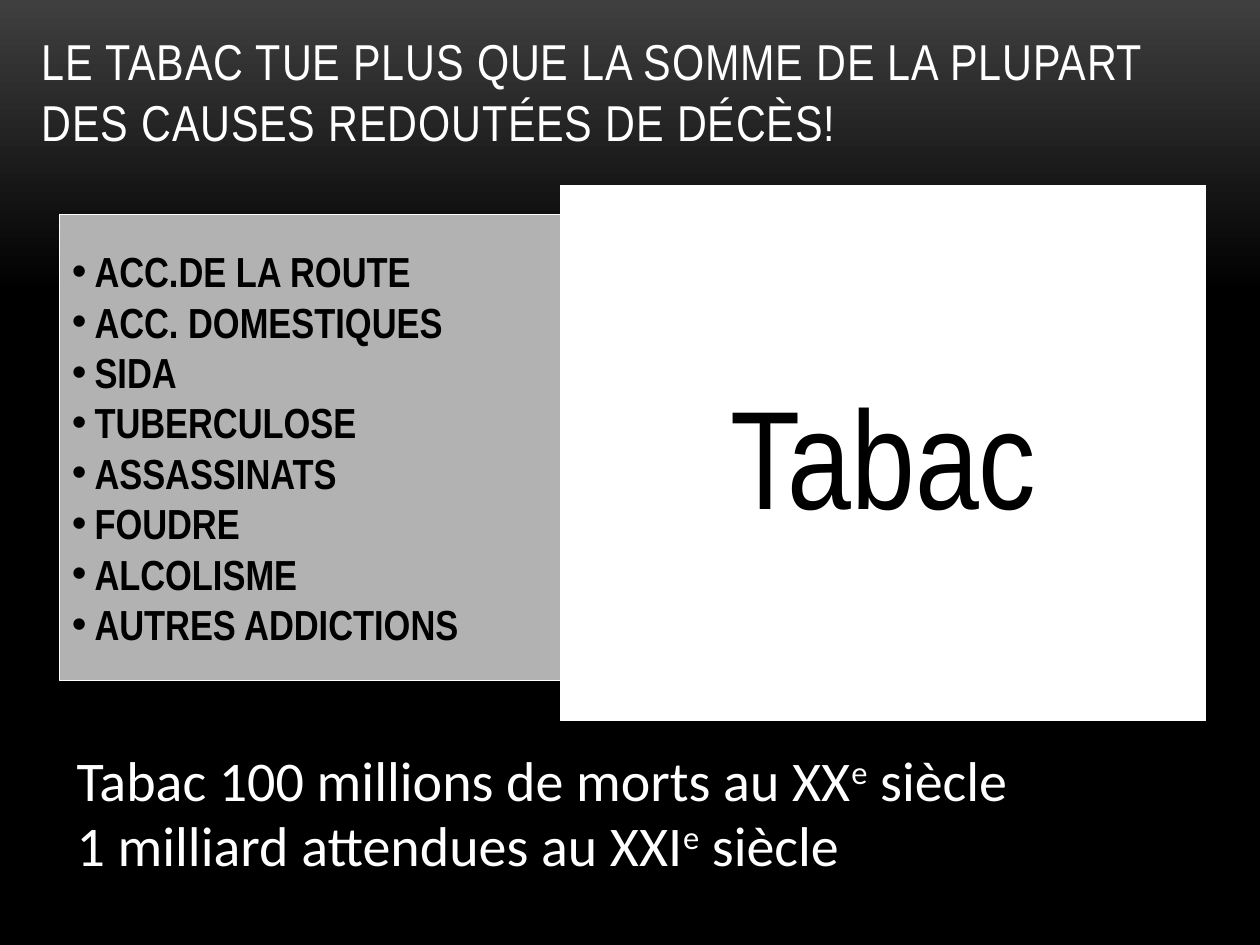
import pptx
import pptx.dml.color
import pptx.enum.shapes
import pptx.enum.text
import pptx.util
from lxml import etree
from pptx.oxml.ns import qn
from pptx.util import Inches

COLOURS = {"black": "000000", "charcoal": "3F3F3F", "grey": "B2B2B2", "white": "FFFFFF"}
NARROW = "Arial Narrow"
CAUSES = [
    "ACC.DE LA ROUTE",
    "ACC. DOMESTIQUES",
    "SIDA",
    "TUBERCULOSE",
    "ASSASSINATS",
    "FOUDRE",
    "ALCOLISME",
    "AUTRES ADDICTIONS",
]
TOLLS = [
    ("Tabac 100 millions de morts au XX", "e", " siècle"),
    ("1 milliard attendues au XXI", "e", " siècle"),
]


def rgb(name):
    return pptx.dml.color.RGBColor.from_string(COLOURS[name])


def place(shape, left, top, width, height):
    shape.left, shape.top = Inches(left), Inches(top)
    shape.width, shape.height = Inches(width), Inches(height)


def style(font, face, size, colour, bold=False):
    font.name = face
    font.size = pptx.util.Pt(size)
    font.bold = bold
    font.color.rgb = rgb(colour)


def set_frame(frame, anchor, wrap):
    frame.auto_size = pptx.enum.text.MSO_AUTO_SIZE.NONE
    frame.vertical_anchor = anchor
    frame.word_wrap = wrap


def paint_panel(panel, colour):
    panel.fill.solid()
    panel.fill.fore_color.rgb = rgb(colour)
    panel.line.color.rgb = rgb("white")
    panel.line.width = pptx.util.Pt(0.75)


def paint_background(slide):
    fill = slide.background.fill
    fill.gradient()
    fill.gradient_angle = 270
    for stop, (colour, position) in zip(fill.gradient_stops, [("charcoal", 0), ("black", 0.31)]):
        stop.color.rgb = rgb(colour)
        stop.position = position


def write_title(title):
    place(title, 0.23, 0.15, 9.61, 1.1)
    set_frame(title.text_frame, pptx.enum.text.MSO_ANCHOR.BOTTOM, True)
    title.text_frame.text = (
        "LE TABAC TUE PLUS QUE LA SOMME DE LA PLUPART DES CAUSES REDOUTÉES DE DÉCÈS!"
    )
    headline = title.text_frame.paragraphs[0]
    headline.alignment = pptx.enum.text.PP_ALIGN.LEFT
    for run in headline.runs:
        style(run.font, NARROW, 28.8, "white")
        run.font._element.set("spc", "50")


def write_causes(causes):
    place(causes, 0.47, 1.7, 4.06, 3.7)
    paint_panel(causes, "grey")
    frame = causes.text_frame
    set_frame(frame, pptx.enum.text.MSO_ANCHOR.MIDDLE, False)
    frame.text = "\n".join(CAUSES)
    for cause in frame.paragraphs:
        cause.space_before = pptx.util.Pt(0)
        properties = cause._p.get_or_add_pPr()
        properties.set("marL", str(Inches(0.18)))
        properties.set("indent", str(-Inches(0.18)))
        etree.SubElement(properties, qn("a:buFont")).set("typeface", "Arial")
        etree.SubElement(properties, qn("a:buChar")).set("char", "•")
        for run in cause.runs:
            style(run.font, NARROW, 24, "black", True)


def add_tobacco(slide):
    tobacco = slide.shapes.add_shape(
        pptx.enum.shapes.MSO_SHAPE.RECTANGLE,
        Inches(4.45), Inches(1.47), Inches(5.12), Inches(4.25),
    )
    tobacco.shadow.inherit = False
    paint_panel(tobacco, "white")
    set_frame(tobacco.text_frame, pptx.enum.text.MSO_ANCHOR.MIDDLE, False)
    tobacco.text_frame.text = "Tabac"
    word = tobacco.text_frame.paragraphs[0]
    word.alignment = pptx.enum.text.PP_ALIGN.CENTER
    style(word.runs[0].font, NARROW, 80, "black")


def add_tolls(slide):
    tolls = slide.shapes.add_textbox(Inches(0.51), Inches(5.97), Inches(9.4), Inches(1.2))
    frame = tolls.text_frame
    set_frame(frame, pptx.enum.text.MSO_ANCHOR.TOP, True)
    for index, parts in enumerate(TOLLS):
        toll = frame.add_paragraph() if index else frame.paragraphs[0]
        toll.line_spacing = 0.8
        toll.space_before = pptx.util.Pt(6.4 if index else 0)
        for part in parts:
            run = toll.add_run()
            run.text = part
            style(run.font, "Calibri", 32, "white")
            if part == "e":
                run.font._element.set("baseline", "30000")


def main():
    presentation = pptx.Presentation()
    presentation.slide_width, presentation.slide_height = Inches(10), Inches(7.5)
    slide = presentation.slides.add_slide(presentation.slide_layouts[1])
    paint_background(slide)
    write_title(slide.shapes.title)
    write_causes(slide.placeholders[1])
    add_tobacco(slide)
    add_tolls(slide)
    presentation.save("out.pptx")


if __name__ == "__main__":
    main()
